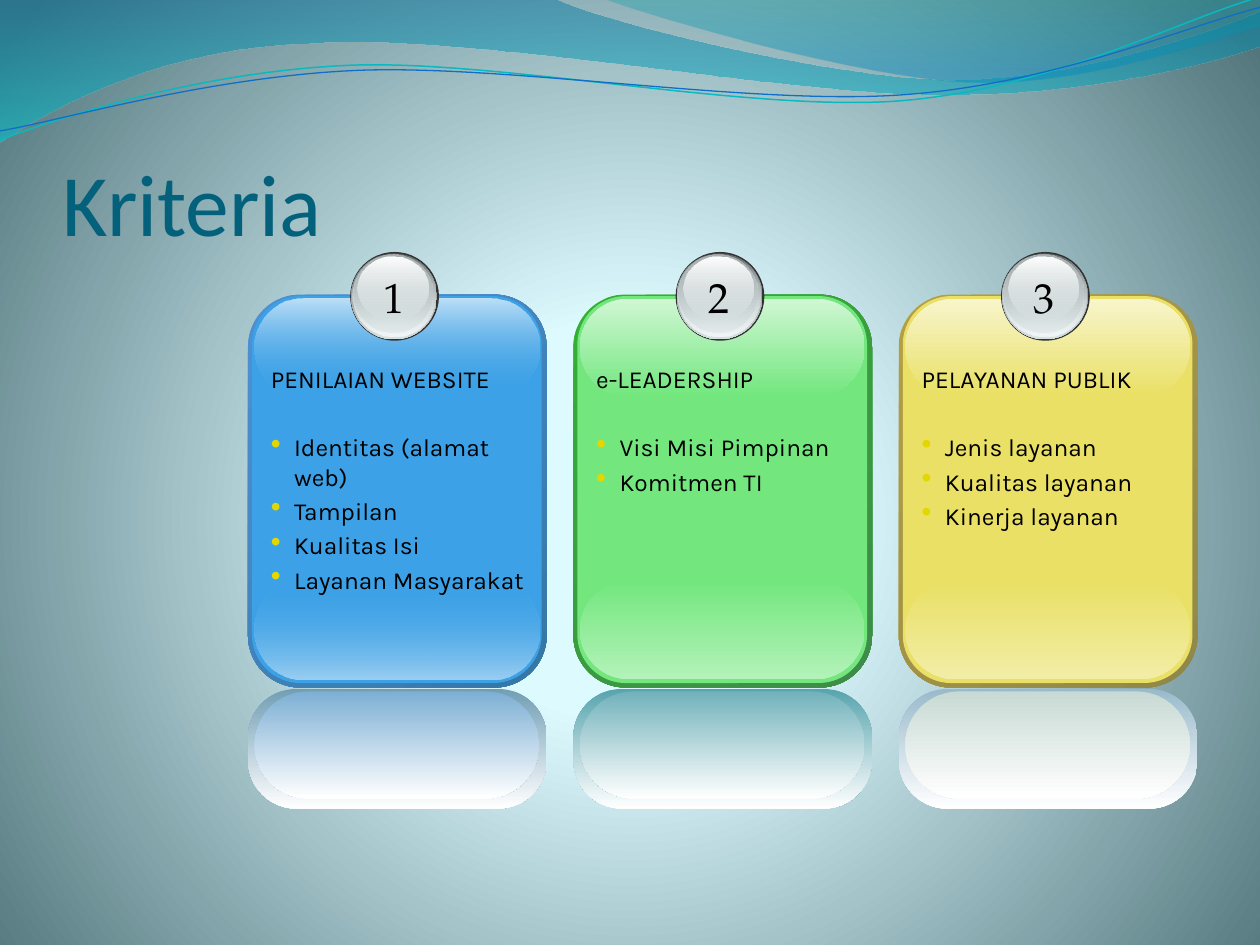
from lxml.etree import SubElement
from pptx import Presentation
from pptx.dml.color import RGBColor
from pptx.enum.shapes import MSO_SHAPE as SHAPE
from pptx.enum.text import MSO_ANCHOR as ANCHOR, MSO_AUTO_SIZE as AUTO, PP_ALIGN as ALIGN
from pptx.oxml.ns import qn
from pptx.util import Cm, Pt

BLACK = "000000"
CARD_W, CARD_STEP = 6.02, 6.56
# heading, bullets, text height, edge gradient, face, top gloss, bottom gloss,
# opacity of the gloss where it meets the face, outer and inner reflection
CARDS = [
    ("PENILAIAN WEBSITE",
     ["Identitas (alamat web)", "Tampilan", "Kualitas Isi", "Layanan Masyarakat"], 5.05,
     ("4E91D4", "3477A4"), "3CA1E6", "BEE0F7", "9BCFF2", 0, "729EB4", "7DAFD4"),
    ("e-LEADERSHIP", ["Visi Misi Pimpinan", "Komitmen TI"], 3,
     ("34B034", "3F8B4A"), "73E77E", "D0F7D4", "B3F2B9", 100, "58A4AE", "72B2BB"),
    ("PELAYANAN PUBLIK", ["Jenis layanan", "Kualitas layanan", "Kinerja layanan"], 3.73,
     ("B59F43", "8F8849"), "E9E065", "F8F5CC", "F2EDA6", 100, "99BACC", "C8DAD4"),
]


def rgb(value):
    return RGBColor.from_string(value)


def set_gradient(fill, holder, stops, angle=90):
    """Stops are (position %, colour[, opacity %]); angle runs clockwise."""
    fill.gradient()
    grad = holder.xpath(".//a:gradFill")[0]
    stop_list = grad.find(qn("a:gsLst"))
    for old in list(stop_list):
        stop_list.remove(old)
    for position, color, *opacity in stops:
        gs = SubElement(stop_list, qn("a:gs"), pos=str(position * 1000))
        clr = SubElement(gs, qn("a:srgbClr"), val=color)
        if opacity:
            SubElement(clr, qn("a:alpha"), val=str(opacity[0] * 1000))
    grad.find(qn("a:lin")).set("ang", str(angle * 60000))
    return grad


def paint(sp, fill, angle=90):
    """Fill with a colour or a list of gradient stops, without line or shadow."""
    if isinstance(fill, str):
        sp.fill.solid()
        sp.fill.fore_color.rgb = rgb(fill)
    else:
        set_gradient(sp.fill, sp._element, fill, angle)
    sp.line.fill.background()
    sp.shadow.inherit = False


def add_preset(shapes, kind, x, y, w, h, fill, angle=90, adj=None):
    sp = shapes.add_shape(kind, Cm(x), Cm(y), Cm(w), Cm(h))
    if adj is not None:
        sp.adjustments[0] = adj
    paint(sp, fill, angle)


def add_box(shapes, x, y, w, h, wrap=True, auto=AUTO.SHAPE_TO_FIT_TEXT):
    tf = shapes.add_textbox(Cm(x), Cm(y), Cm(w), Cm(h)).text_frame
    tf.word_wrap = wrap
    tf.auto_size = auto
    return tf


def write(p, text, size=14, font="Karla", color=BLACK, align=ALIGN.LEFT,
          before=0, bullet=None):
    p.alignment = align
    p.space_before = Pt(before)
    r = p.add_run()
    r.text = text
    r.font.size, r.font.name = Pt(size), font
    r.font.color.rgb = rgb(color)
    if bullet:
        pPr = p._p.get_or_add_pPr()
        pPr.set("marL", str(Cm(0.47)))
        pPr.set("indent", str(-Cm(0.47)))
        SubElement(SubElement(pPr, qn("a:buClr")), qn("a:srgbClr"), val=bullet)
        SubElement(pPr, qn("a:buSzPct"), val="120000")
        SubElement(pPr, qn("a:buFontTx"))
        SubElement(pPr, qn("a:buChar"), char="•")


def add_outline(shapes, start, *steps, close=False):
    """Each step is one point (a line) or three (a Bezier curve)."""
    builder = shapes.build_freeform(Cm(start[0]), Cm(start[1]))
    builder.add_line_segments([(Cm(x), Cm(y)) for step in steps for x, y in step],
                              close=close)
    sp = builder.convert_to_shape()
    segments = iter(sp._element.xpath(".//a:lnTo"))
    for step in steps:
        parts = [next(segments) for _ in step]
        if len(parts) == 3:
            curve = parts[0].makeelement(qn("a:cubicBezTo"))
            parts[0].addprevious(curve)
            for part in parts:
                curve.append(part[0])
                part.getparent().remove(part)
    return sp


def add_background(s):
    grad = set_gradient(s.background.fill, s._element,
                        [(0, "DEFBFF"), (25, "DDFAFF"), (100, "52767C")])
    grad.remove(grad.find(qn("a:lin")))
    circle = SubElement(grad, qn("a:path"))
    circle.set("path", "circle")
    SubElement(circle, qn("a:fillToRect"), l="10000", t="110000", r="10000", b="100000")


def add_waves(shapes):
    wide = add_outline(
        shapes, (0, 0), [(11.18, -0.03)],
        [(12.09, 0.43), (16.87, 1.6), (19.25, 1.6)],
        [(21.67, 1.6), (24.33, 0.66), (25.4, 0.23)], [(25.43, 0.91)],
        [(24.97, 1.12), (22.1, 1.93), (18.95, 1.91)],
        [(15.8, 1.91), (9.7, 0.71), (6.53, 0.86)],
        [(3.28, 0.91), (1.17, 2.11), (-0.03, 2.87)], [(0, 0)], close=True)
    right = add_outline(
        shapes, (12.17, -0.03), [(12.93, 0.28), (17.32, 1.57), (19.53, 1.65)],
        [(21.74, 1.75), (24.41, 0.81), (25.4, 0.53)], [(25.4, 0)],
        [(12.17, -0.03)], close=True)
    paint(wide, [(0, "0074A1", 45), (100, "00C6CF", 55)])
    paint(right, [(0, "00A1A9", 30), (80, "008BBF", 45)])

    lines = shapes.add_group_shape().shapes
    teal = add_outline(
        lines, (-0.05, 2.22), [(1.19, 1.82), (4.02, 1.04), (7.05, 1.05)],
        [(10.05, 1.07), (15.02, 2.37), (18.08, 2.29)],
        [(21.13, 2.2), (23.87, 0.91), (25.41, 0.55)])
    blue = add_outline(
        lines, (-0.04, 2.04), [(1.16, 1.9), (4.18, 1.15), (7.2, 1.16)],
        [(10.25, 1.18), (15.13, 2.25), (18.18, 2.17)],
        [(21.21, 2.1), (23.93, 1.06), (25.45, 0.75)])
    for sp, color, width in ((teal, "0AB8BF", 0.85), (blue, "0F6FC6", 0.75)):
        sp.rotation = 357.3
        sp.fill.background()
        sp.line.color.rgb, sp.line.width = rgb(color), Pt(width)
        sp.shadow.inherit = False


def add_title(shapes, x, y, w, h):
    tf = add_box(shapes, x, y, w, h, auto=AUTO.NONE)
    tf.vertical_anchor = ANCHOR.BOTTOM
    tf.margin_left = tf.margin_right = tf.margin_bottom = 0
    write(tf.paragraphs[0], "Kriteria", size=50, font="Calibri", color="04617B")


def add_badge(shapes, x, y, number):
    for dx, dy, w, h, fill in (
            (0, 0, 1.79, 1.79, "333333"),
            (0.02, 0.03, 1.73, 1.73, [(0, "636869"), (100, "D6E1E2")]),
            (0.04, 0.03, 1.68, 1.68, [(0, "D6E1E2", 0), (100, "F1F5F5")]),
            (0.06, 0.05, 1.6, 1.57, [(0, "AAB2B3"), (100, "D6E1E2", 48)]),
            (0.15, 0.1, 1.42, 1.27, [(0, "FFFFFF"), (100, "D6E1E2", 38)])):
        add_preset(shapes, SHAPE.OVAL, x + dx, y + dy, w, h, fill)
    tf = add_box(shapes, x + 0.38, y + 0.26, 0.99, 1.27, wrap=False)
    write(tf.paragraphs[0], str(number), size=24, font="TeX Gyre Pagella",
          align=ALIGN.CENTER)


def add_card(shapes, x, y, number, card):
    heading, bullets, text_h, edge, face, top, bottom, opacity, outer, inner = card
    inset, gloss_w = 0.13, 5.74
    for dx, dy, w, h, adj, fill, angle in (
            (0, 0.86, CARD_W, 7.92, 0.175, [(0, edge[0]), (100, edge[1])], 45),
            (0.08, 0.89, 5.84, 7.8, 0.167, face, 90),
            (inset, 6.63, gloss_w, 1.98, 0.5, [(0, face, opacity), (100, bottom)], 90),
            (inset, 0.94, gloss_w, 1.96, 0.5, [(0, top), (100, face, opacity)], 90),
            (0, 8.81, CARD_W, 2.41, 0.404, [(0, outer), (100, "FFFFFF")], 90),
            (inset, 8.86, gloss_w, 2.16, 0.5, [(0, inner), (100, "FFFFFF")], 90)):
        add_preset(shapes, SHAPE.ROUNDED_RECTANGLE, x + dx, y + dy, w, h, fill, angle, adj)
    add_badge(shapes, x + 2.06, y, number)

    tf = add_box(shapes, x + 0.21, y + 2.13, 5.72, text_h)
    write(tf.paragraphs[0], heading, before=2.8)
    for i, text in enumerate(bullets):
        write(tf.add_paragraph(), text, before=2.8 if i else 22.4, bullet="E2D700")


def main():
    prs = Presentation()
    prs.slide_width, prs.slide_height = Cm(25.4), Cm(19.05)
    s = prs.slides.add_slide(prs.slide_layouts[6])
    add_background(s)
    add_waves(s.shapes)
    add_title(s.shapes, 1.27, 1.95, 22.86, 3.18)
    for i, card in enumerate(CARDS):
        group = s.shapes.add_group_shape()
        add_card(group.shapes, 5 + i * CARD_STEP, 5.08, i + 1, card)
    prs.save("out.pptx")


if __name__ == "__main__":
    main()
